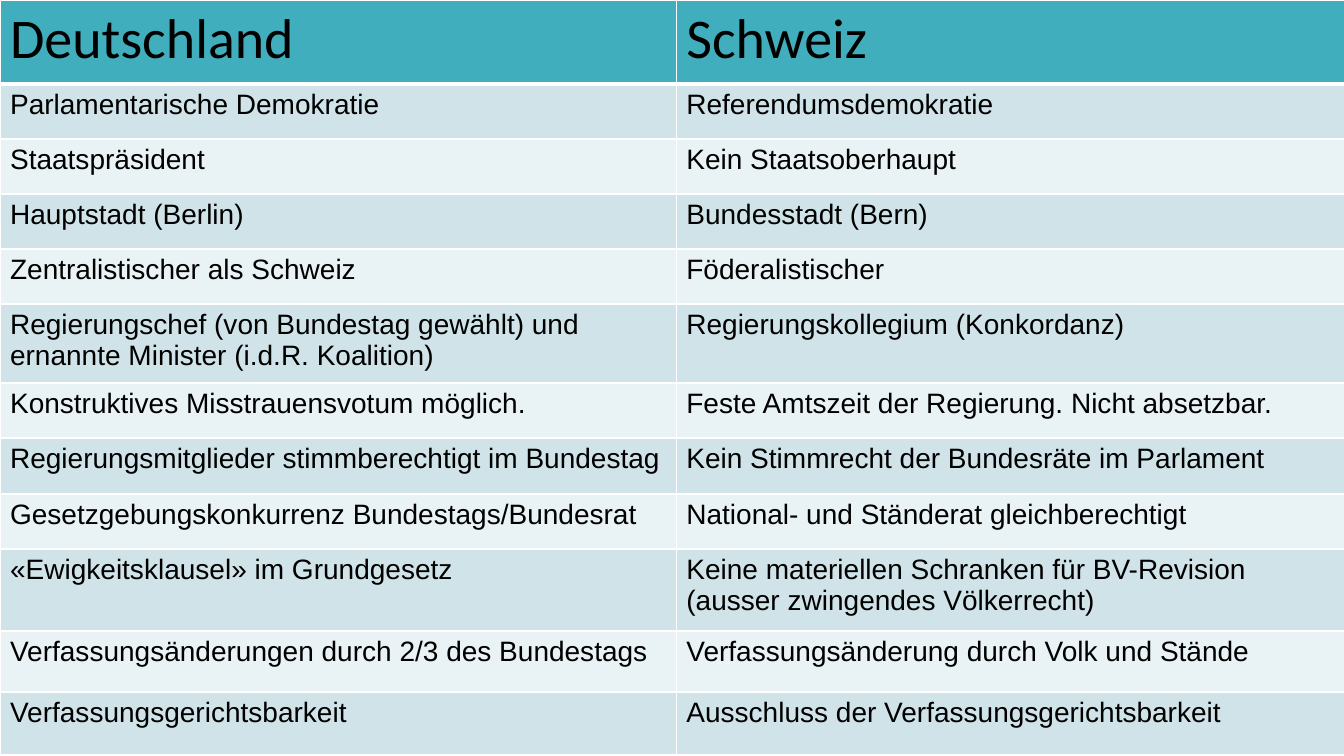
from dataclasses import dataclass

from lxml import etree
from pptx import Presentation
from pptx.dml.color import RGBColor
from pptx.oxml.ns import qn
from pptx.util import Pt

BLANK = 6
SIDES = ("a:lnL", "a:lnR", "a:lnT", "a:lnB")


@dataclass(frozen=True)
class Theme:
    back: str = "000000"
    ink: str = "000000"
    rule: str = "FFFFFF"
    head: str = "41AEBD"
    dark: str = "CFE3E8"
    light: str = "E9F2F4"
    head_font: str = "Calibri"
    body_font: str = "Arial"
    head_size: float = 40
    body_size: float = 20
    thin: float = 1
    thick: float = 3


THEME = Theme()
WIDTHS = (483.1, 480.2)
ROWS = (
    (60, "Deutschland", "Schweiz"),
    (39.3, "Parlamentarische Demokratie", "Referendumsdemokratie"),
    (39.3, "Staatspräsident", "Kein Staatsoberhaupt"),
    (39.3, "Hauptstadt (Berlin)", "Bundesstadt (Bern)"),
    (39.3, "Zentralistischer als Schweiz", "Föderalistischer"),
    (56.4, "Regierungschef (von Bundestag gewählt) und ernannte Minister (i.d.R. Koalition)",
     "Regierungskollegium (Konkordanz)"),
    (39.3, "Konstruktives Misstrauensvotum möglich.",
     "Feste Amtszeit der Regierung. Nicht absetzbar."),
    (40, "Regierungsmitglieder stimmberechtigt im Bundestag",
     "Kein Stimmrecht der Bundesräte im Parlament"),
    (39.3, "Gesetzgebungskonkurrenz Bundestags/Bundesrat",
     "National- und Ständerat gleichberechtigt"),
    (58.6, "«Ewigkeitsklausel» im Grundgesetz",
     "Keine materiellen Schranken für BV-Revision (ausser zwingendes Völkerrecht)"),
    (43.6, "Verfassungsänderungen durch 2/3 des Bundestags",
     "Verfassungsänderung durch Volk und Stände"),
    (45, "Verfassungsgerichtsbarkeit", "Ausschluss der Verfassungsgerichtsbarkeit"),
)


def paint(fill, color):
    fill.solid()
    fill.fore_color.rgb = RGBColor.from_string(color)


def edge(cell, base):
    props = cell._tc.get_or_add_tcPr()
    for spot, side in enumerate(SIDES):
        width = base if side == "a:lnB" else THEME.thin
        line = etree.Element(qn(side), w=str(Pt(width)))
        fill = etree.SubElement(line, qn("a:solidFill"))
        etree.SubElement(fill, qn("a:srgbClr"), val=THEME.rule)
        props.insert(spot, line)


def write(cell, text, face, size):
    cell.text_frame.text = text
    font = cell.text_frame.paragraphs[0].runs[0].font
    font.name, font.size, font.bold = face, Pt(size), False
    font.color.rgb = RGBColor.from_string(THEME.ink)


def style(row):
    if row == 0:
        return THEME.head, THEME.head_font, THEME.head_size, THEME.thick
    band = THEME.dark if row % 2 else THEME.light
    return band, THEME.body_font, THEME.body_size, THEME.thin


def add_grid(slide):
    high = sum(row[0] for row in ROWS)
    table = slide.shapes.add_table(
        len(ROWS), len(WIDTHS), Pt(0), Pt(0), Pt(sum(WIDTHS)), Pt(high)).table
    for column, width in zip(table.columns, WIDTHS):
        column.width = Pt(width)
    for row, (height, *texts) in enumerate(ROWS):
        table.rows[row].height = Pt(height)
        color, face, size, base = style(row)
        for col, text in enumerate(texts):
            cell = table.cell(row, col)
            write(cell, text, face, size)
            paint(cell.fill, color)
            edge(cell, base)


def main():
    deck = Presentation()
    deck.slide_width, deck.slide_height = Pt(960), Pt(540)
    slide = deck.slides.add_slide(deck.slide_layouts[BLANK])
    paint(slide.background.fill, THEME.back)
    add_grid(slide)
    deck.save("out.pptx")


if __name__ == "__main__":
    main()
